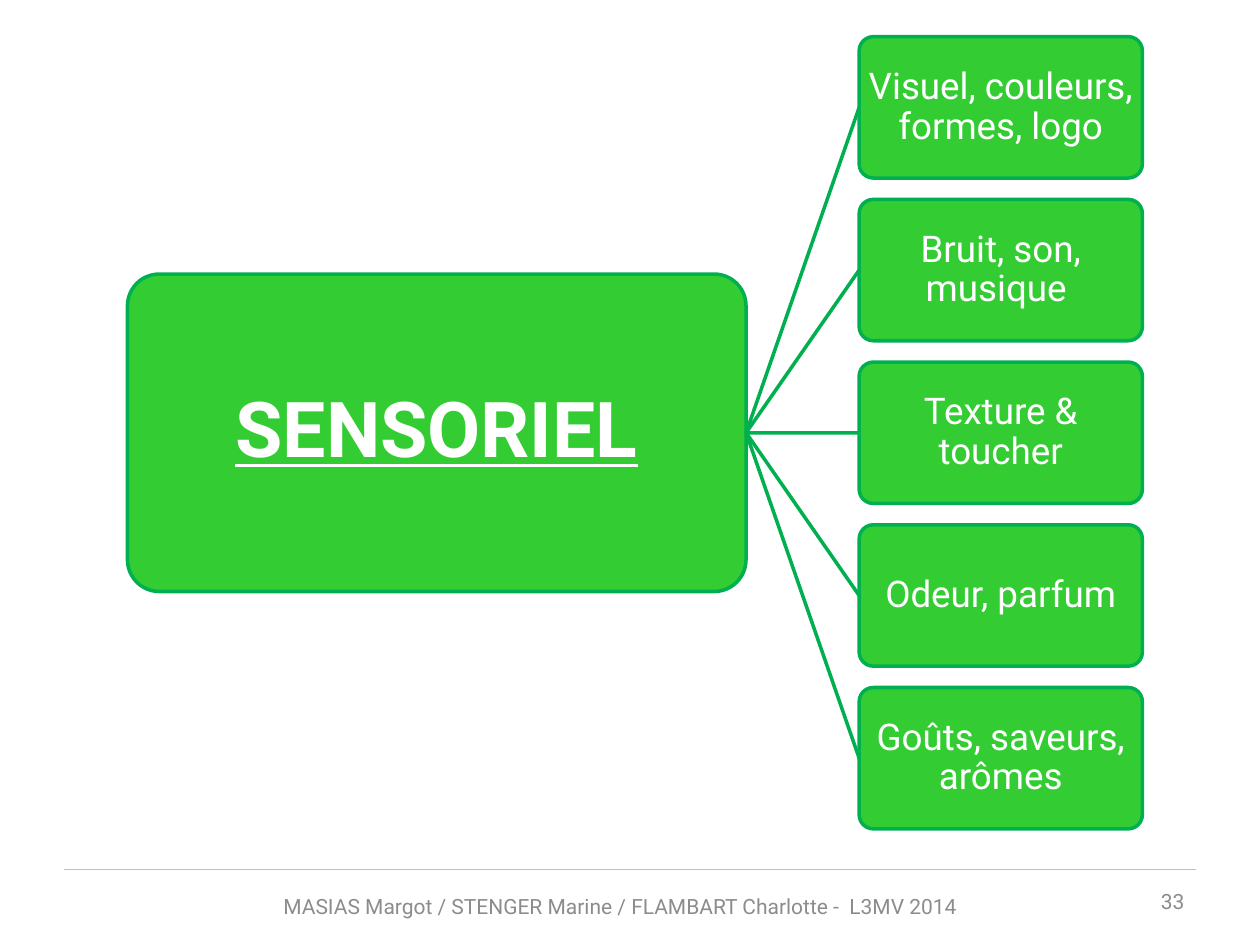
"""Build the slide that links the sensory theme to its five components."""
from dataclasses import dataclass

from lxml import etree
from pptx import Presentation
from pptx.dml.color import RGBColor
from pptx.enum.shapes import MSO_CONNECTOR, MSO_SHAPE
from pptx.enum.text import MSO_ANCHOR, MSO_AUTO_SIZE, PP_ALIGN
from pptx.oxml.ns import qn
from pptx.shapes.autoshape import Shape
from pptx.shapes.connector import Connector
from pptx.slide import Slide
from pptx.util import Cm, Pt

STRAIGHT = MSO_CONNECTOR.STRAIGHT
ROUNDED = MSO_SHAPE.ROUNDED_RECTANGLE
MIDDLE = MSO_ANCHOR.MIDDLE
NO_AUTOFIT = MSO_AUTO_SIZE.NONE
CENTER, RIGHT = PP_ALIGN.CENTER, PP_ALIGN.RIGHT
LEFT_SIDE, RIGHT_SIDE = 1, 3


@dataclass(frozen=True)
class Theme:
    """Colours, font and sizes of the slide."""
    font: str = "Roboto"
    fill: RGBColor = RGBColor(0x33, 0xCC, 0x33)
    outline: RGBColor = RGBColor(0x00, 0xB0, 0x50)
    text: RGBColor = RGBColor(0xFF, 0xFF, 0xFF)
    muted: RGBColor = RGBColor(0x8C, 0x8C, 0x8C)
    rule: RGBColor = RGBColor(0xBF, 0xBF, 0xBF)
    title_size: float = 44
    leaf_size: float = 21
    footer_size: float = 12
    outline_width: float = 2
    rule_width: float = 0.75


@dataclass(frozen=True)
class Box:
    """Position and size in centimetres."""
    left: float
    top: float
    width: float
    height: float

    def lengths(self) -> tuple[Cm, Cm, Cm, Cm]:
        """Return the four lengths in the order that shapes take them."""
        return Cm(self.left), Cm(self.top), Cm(self.width), Cm(self.height)


@dataclass(frozen=True)
class Note:
    """A line of text at the foot of the slide."""
    text: str
    box: Box
    align: PP_ALIGN


THEME = Theme()
SENSES = (
    "Visuel, couleurs, formes, logo",
    "Bruit, son, musique ",
    "Texture & toucher",
    "Odeur, parfum",
    "Goûts, saveurs, arômes",
)
LEAF = Box(17.32, 0.74, 5.71, 2.85)
LEAF_PITCH = 3.28
ROOT_HEIGHT = 6.4
LEAVES_MIDDLE = LEAF.top + (LEAF_PITCH * (len(SENSES) - 1) + LEAF.height) / 2
ROOT = Box(2.57, LEAVES_MIDDLE - ROOT_HEIGHT / 2, 12.47, ROOT_HEIGHT)
NOTES = (
    Note("MASIAS Margot / STENGER Marine / FLAMBART Charlotte -  L3MV 2014",
         Box(3.91, 17.93, 17.2, 0.66), CENTER),
    Note("33", Box(18.21, 17.65, 5.92, 1.02), RIGHT),
)


def write(sp: Shape, text: str, size: float, color: RGBColor,
          align: PP_ALIGN = CENTER, strong: bool = False) -> None:
    """Write one vertically centred paragraph into a shape."""
    tf = sp.text_frame
    tf.word_wrap = True
    tf.auto_size = NO_AUTOFIT
    tf.vertical_anchor = MIDDLE
    p = tf.paragraphs[0]
    p.alignment = align
    r = p.add_run()
    r.text = text
    r.font.name = THEME.font
    r.font.size = Pt(size)
    r.font.color.rgb = color
    if strong:
        r.font.bold = r.font.underline = True


def tighten(sp: Shape, inset: float) -> None:
    """Set equal insets and the diagram's close line spacing."""
    tf = sp.text_frame
    tf.margin_left = tf.margin_right = Cm(inset)
    tf.margin_top = tf.margin_bottom = Cm(inset)
    tf.paragraphs[0].line_spacing = 0.9


def add_node(s: Slide, box: Box) -> Shape:
    """Draw a green rounded box."""
    sp = s.shapes.add_shape(ROUNDED, *box.lengths())
    sp.adjustments[0] = 0.1
    sp.shadow.inherit = False
    sp.fill.solid()
    sp.fill.fore_color.rgb = THEME.fill
    sp.line.color.rgb = THEME.outline
    sp.line.width = Pt(THEME.outline_width)
    return sp


def add_line(s: Slide, start: tuple[float, float], end: tuple[float, float],
             color: RGBColor, width: float) -> Connector:
    """Draw a straight line without a shadow."""
    line = s.shapes.add_connector(
        STRAIGHT, Cm(start[0]), Cm(start[1]), Cm(end[0]), Cm(end[1]))
    line.line.color.rgb = color
    line.line.width = Pt(width)
    etree.SubElement(line.element.spPr, qn("a:effectLst"))
    return line


def add_title(s: Slide) -> None:
    """Lay the title placeholder over the root box."""
    sp = s.shapes.title
    sp.left, sp.top, sp.width, sp.height = ROOT.lengths()
    write(sp, "SENSORIEL", THEME.title_size, THEME.text, strong=True)
    tighten(sp, 0.08)
    sp.element.getparent().append(sp.element)


def add_leaf(s: Slide, root: Shape, index: int, text: str) -> None:
    """Draw one component and join it to the root."""
    box = Box(LEAF.left, LEAF.top + index * LEAF_PITCH, LEAF.width, LEAF.height)
    sp = add_node(s, box)
    write(sp, text, THEME.leaf_size, THEME.text)
    tighten(sp, 0.03)
    line = add_line(s, (ROOT.left + ROOT.width, LEAVES_MIDDLE),
                    (box.left, box.top + box.height / 2),
                    THEME.outline, THEME.outline_width)
    line.begin_connect(root, RIGHT_SIDE)
    line.end_connect(sp, LEFT_SIDE)


def main() -> None:
    """Build and save the slide."""
    prs = Presentation()
    prs.slide_width, prs.slide_height = Cm(25.4), Cm(19.05)
    s = prs.slides.add_slide(prs.slide_layouts.get_by_name("Title Only"))
    add_line(s, (1.3, 17.53), (24.1, 17.53), THEME.rule, THEME.rule_width)
    root = add_node(s, ROOT)
    add_title(s)
    for index, text in enumerate(SENSES):
        add_leaf(s, root, index, text)
    for note in NOTES:
        sp = s.shapes.add_textbox(*note.box.lengths())
        write(sp, note.text, THEME.footer_size, THEME.muted, note.align)
    prs.save("out.pptx")


if __name__ == "__main__":
    main()
